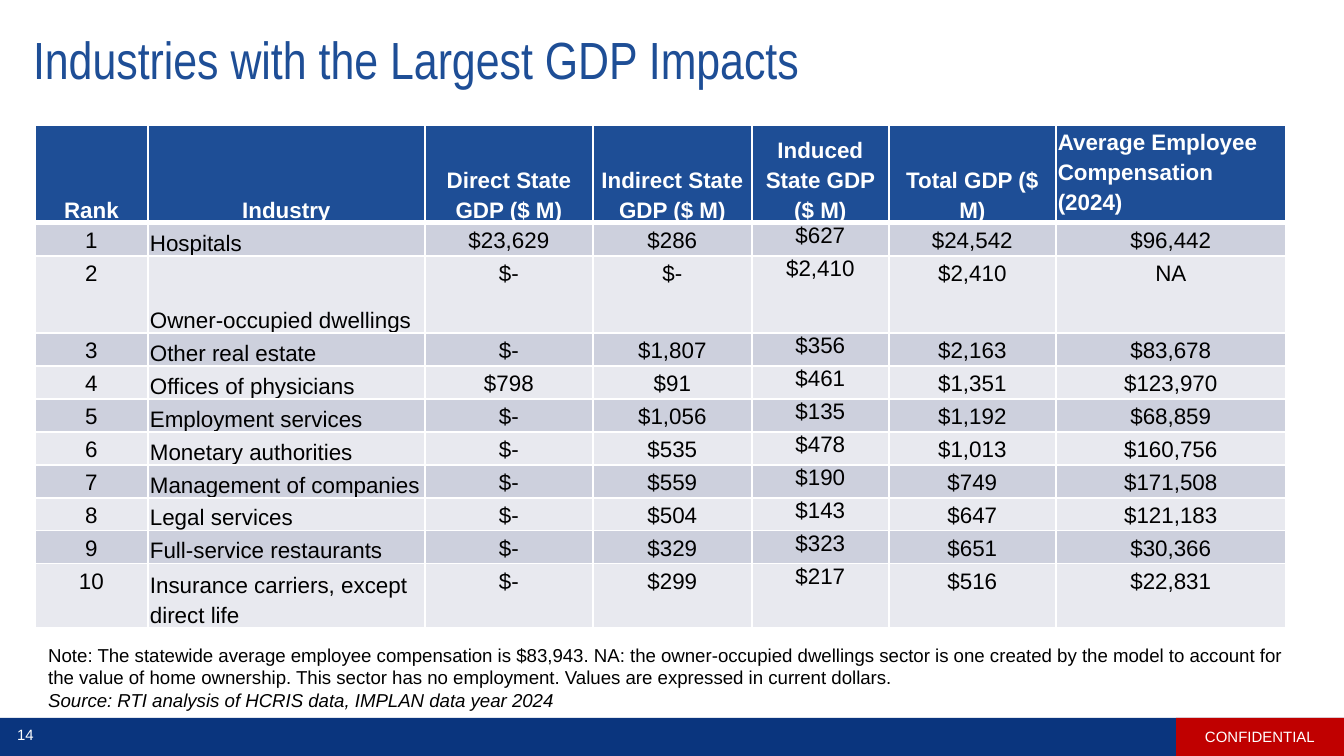
import pptx
import pptx.dml.color
import pptx.enum.shapes
import pptx.enum.text
import pptx.oxml.ns
import pptx.util
from lxml import etree

RGBColor = pptx.dml.color.RGBColor
Pt = pptx.util.Pt
ALIGN = pptx.enum.text.PP_ALIGN
ANCHOR = pptx.enum.text.MSO_ANCHOR

PAGE_WIDTH, PAGE_HEIGHT = 1344, 756
SCALE = 9144000 / PAGE_WIDTH

BLUE = RGBColor(0x1E, 0x4E, 0x96)
NAVY = RGBColor(0x0A, 0x35, 0x7E)
RED = RGBColor(0xC0, 0x00, 0x00)
WHITE = RGBColor(0xFF, 0xFF, 0xFF)
BLACK = RGBColor(0x00, 0x00, 0x00)
BANDS = (RGBColor(0xCD, 0xD0, 0xDD), RGBColor(0xE8, 0xE9, 0xEF))

COLUMN_WIDTHS = [113, 277, 168, 159, 137, 167, 230]
ROW_HEIGHTS = [98, 33, 77] + [33] * 7 + [60]
INDUSTRY, INDUCED, COMPENSATION = 1, 4, 6

HEADERS = ["Rank", "Industry", "Direct State GDP ($ M)", "Indirect State GDP ($ M)",
           "Induced State GDP ($ M)", "Total GDP ($ M)", "Average Employee Compensation (2024)"]
INDUSTRIES = [
    ["Hospitals", "$23,629", "$286", "$627", "$24,542", "$96,442"],
    ["Owner-occupied dwellings", "$-", "$-", "$2,410", "$2,410", "NA"],
    ["Other real estate", "$-", "$1,807", "$356", "$2,163", "$83,678"],
    ["Offices of physicians", "$798", "$91", "$461", "$1,351", "$123,970"],
    ["Employment services", "$-", "$1,056", "$135", "$1,192", "$68,859"],
    ["Monetary authorities", "$-", "$535", "$478", "$1,013", "$160,756"],
    ["Management of companies", "$-", "$559", "$190", "$749", "$171,508"],
    ["Legal services", "$-", "$504", "$143", "$647", "$121,183"],
    ["Full-service restaurants", "$-", "$329", "$323", "$651", "$30,366"],
    ["Insurance carriers, except direct life", "$-", "$299", "$217", "$516", "$22,831"],
]
NOTES = [
    "Note: The statewide average employee compensation is $83,943. NA: the owner-occupied "
    "dwellings sector is one created by the model to account for the value of home ownership. "
    "This sector has no employment. Values are expressed in current dollars.",
    "Source: RTI analysis of HCRIS data, IMPLAN data year 2024",
]


def px(length):
    return pptx.util.Emu(round(length * SCALE))


def px_box(box):
    return [px(length) for length in box]


def format_text(para, size, color, align=ALIGN.LEFT, font="Arial", bold=False, italic=False):
    para.alignment = align
    for span in para.runs:
        span.font.name = font
        span.font.size = Pt(size)
        span.font.bold = bold
        span.font.italic = italic
        span.font.color.rgb = color


def add_title(page, box, text):
    title = page.shapes.title
    title.left, title.top, title.width, title.height = px_box(box)
    frame = title.text_frame
    frame.margin_left = frame.margin_top = frame.margin_bottom = px(13)
    frame.margin_right = px(27)
    frame.vertical_anchor = ANCHOR.MIDDLE
    frame.auto_size = pptx.enum.text.MSO_AUTO_SIZE.NONE
    frame.text = text
    frame.paragraphs[0].line_spacing = 0.9
    format_text(frame.paragraphs[0], 28, BLUE, font="Arial Narrow")


def set_borders(cell, top, bottom):
    properties = cell._tc.get_or_add_tcPr()
    for side, width in (("L", 1), ("R", 1), ("T", top), ("B", bottom)):
        line = etree.SubElement(properties, pptx.oxml.ns.qn(f"a:ln{side}"), w=str(Pt(width)))
        fill = etree.SubElement(line, pptx.oxml.ns.qn("a:solidFill"))
        etree.SubElement(fill, pptx.oxml.ns.qn("a:srgbClr"), val=str(WHITE))


def fill_cell(cell, text, row, column):
    is_header = row == 0
    set_borders(cell, top=3 if row == 1 else 1, bottom=3 if is_header else 1)
    cell.fill.solid()
    cell.fill.fore_color.rgb = BLUE if is_header else BANDS[(row - 1) % 2]
    cell.margin_left = cell.margin_right = px(2)
    cell.margin_top = cell.margin_bottom = 0

    at_bottom = column != COMPENSATION if is_header else column == INDUSTRY
    cell.vertical_anchor = ANCHOR.BOTTOM if at_bottom else ANCHOR.TOP
    at_left = column == (COMPENSATION if is_header else INDUSTRY)

    cell.text_frame.text = text
    para = cell.text_frame.paragraphs[0]
    if is_header or column != INDUCED:
        para.line_spacing = 1.2
        para.space_after = Pt(6)
    format_text(para, 12, WHITE if is_header else BLACK,
                ALIGN.LEFT if at_left else ALIGN.CENTER, bold=is_header)


def add_impact_table(page, left, top):
    rows = [HEADERS] + [[str(rank), *values] for rank, values in enumerate(INDUSTRIES, 1)]
    box = (left, top, sum(COLUMN_WIDTHS), sum(ROW_HEIGHTS))
    table = page.shapes.add_table(len(rows), len(HEADERS), *px_box(box)).table
    for column, width in zip(table.columns, COLUMN_WIDTHS):
        column.width = px(width)
    for row, height in zip(table.rows, ROW_HEIGHTS):
        row.height = px(height)
    for row, texts in enumerate(rows):
        for column, text in enumerate(texts):
            fill_cell(table.cell(row, column), text, row, column)


def add_notes(page, box):
    frame = page.shapes.add_textbox(*px_box(box)).text_frame
    frame.word_wrap = True
    frame.text = "\n".join(NOTES)
    note, source = frame.paragraphs
    format_text(note, 10, BLACK)
    format_text(source, 10, BLACK, italic=True)


def add_bar(page, box, color):
    bar = page.shapes.add_shape(pptx.enum.shapes.MSO_SHAPE.RECTANGLE, *px_box(box))
    bar.shadow.inherit = False
    bar.fill.solid()
    bar.fill.fore_color.rgb = color
    bar.line.fill.background()
    return bar


def add_footer(page, box):
    left, top, width, height = box
    label_width = 168
    add_bar(page, box, NAVY)
    label = add_bar(page, (left + width - label_width, top, label_width, height), RED)
    number = page.shapes.add_textbox(*px_box((left, top + 1, 51, 32)))
    for shape, text in ((label, "CONFIDENTIAL"), (number, "14")):
        frame = shape.text_frame
        frame.word_wrap = True
        frame.vertical_anchor = ANCHOR.MIDDLE
        frame.text = text
        frame.paragraphs[0].space_after = Pt(6)
        format_text(frame.paragraphs[0], 8, WHITE, ALIGN.CENTER)


def main():
    deck = pptx.Presentation()
    deck.slide_width, deck.slide_height = px(PAGE_WIDTH), px(PAGE_HEIGHT)
    page = deck.slides.add_slide(deck.slide_layouts[5])  # title only

    add_footer(page, (0, 718, PAGE_WIDTH, 38))
    add_title(page, (20, 20, 1300, 85), "Industries with the Largest GDP Impacts")
    add_impact_table(page, 35, 125)
    add_notes(page, (35, 637, 1285, 82))

    deck.save("out.pptx")


if __name__ == "__main__":
    main()
